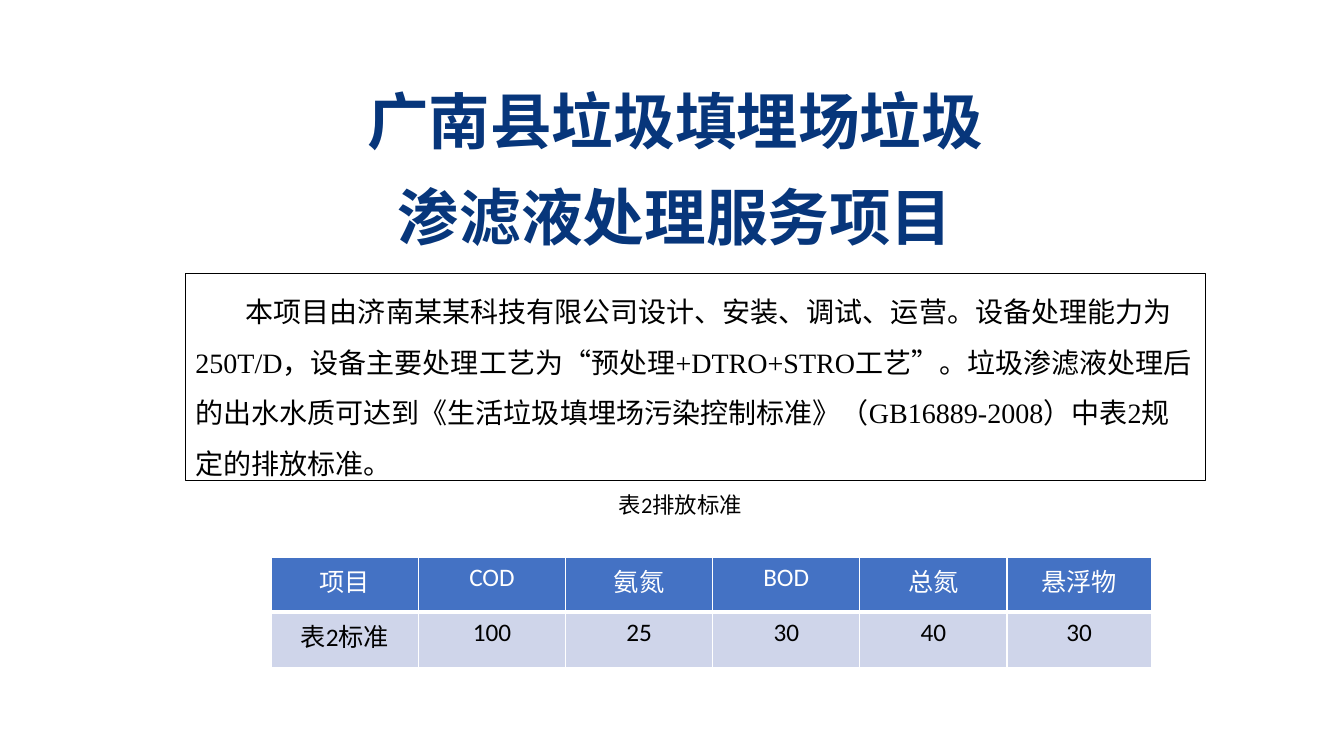
from dataclasses import dataclass

from lxml import etree
from pptx import Presentation
from pptx.dml.color import RGBColor
from pptx.enum.shapes import MSO_SHAPE
from pptx.enum.text import MSO_ANCHOR, MSO_AUTO_SIZE, PP_ALIGN
from pptx.oxml.ns import qn
from pptx.util import Inches, Pt

RECT = MSO_SHAPE.RECTANGLE
TOP = MSO_ANCHOR.TOP
GROW = MSO_AUTO_SIZE.SHAPE_TO_FIT_TEXT
LEFT, CENTER = PP_ALIGN.LEFT, PP_ALIGN.CENTER

NAVY = RGBColor(0x07, 0x36, 0x7B)
BLUE = RGBColor(0x44, 0x72, 0xC4)
PALE = RGBColor(0xCF, 0xD5, 0xEA)
BLACK = RGBColor(0, 0, 0)
WHITE = RGBColor(0xFF, 0xFF, 0xFF)

WIDTH, HEIGHT = Inches(13.33), Inches(7.5)
COL = 10.95  # table column, percent of slide width

ROWS = [
    ["项目", "COD", "氨氮", "BOD", "总氮", "悬浮物"],
    ["表2标准", "100", "25", "30", "40", "30"],
]
ABOUT = (
    "本项目由济南某某科技有限公司设计、安装、调试、运营。设备处理能力为250T/D，"
    "设备主要处理工艺为“预处理+DTRO+STRO工艺”。垃圾渗滤液处理后的出水水质可达到"
    "《生活垃圾填埋场污染控制标准》（GB16889-2008）中表2规定的排放标准。"
)


@dataclass(frozen=True)
class Box:
    """A place on the slide, in percent of its width and height."""
    left: float
    top: float
    width: float
    height: float

    def place(self) -> tuple[int, int, int, int]:
        return (across(self.left), down(self.top),
                across(self.width), down(self.height))


@dataclass(frozen=True)
class Style:
    font: str
    size: int
    color: RGBColor
    align: PP_ALIGN = LEFT
    bold: bool = False
    space: float = 1.0


TITLE = Style("Arial", 44, NAVY, CENTER, True, 1.3)
BODY = Style("Times New Roman", 20, BLACK, space=1.5)
LABEL = Style("Calibri", 16, BLACK)
HEAD = Style("Calibri", 18, WHITE, CENTER)
VALUE = Style("Calibri", 18, BLACK, CENTER)


def across(share: float) -> int:
    return int(WIDTH * share / 100)


def down(share: float) -> int:
    return int(HEIGHT * share / 100)


def write(frame, text: str, style: Style):
    para = frame.paragraphs[0]
    para.alignment = style.align
    para.line_spacing = style.space
    run = para.add_run()
    run.text = text
    font = run.font
    font.name, font.size, font.bold = style.font, Pt(style.size), style.bold
    font.color.rgb = style.color
    return para


def fit(frame) -> None:
    frame.word_wrap = True
    frame.auto_size = GROW
    frame.vertical_anchor = TOP


def edge(cell, side: str, width: float) -> None:
    """Add a white border; call before the cell gets its fill."""
    props = cell._tc.get_or_add_tcPr()
    line = etree.SubElement(props, qn(f"a:ln{side}"), w=str(Pt(width)))
    fill = etree.SubElement(line, qn("a:solidFill"))
    etree.SubElement(fill, qn("a:srgbClr"), val=str(WHITE))


def add_title(slide, box: Box) -> None:
    title = slide.shapes.title
    title.left, title.top, title.width, title.height = box.place()
    fit(title.text_frame)
    write(title.text_frame, "广南县垃圾填埋场垃圾渗滤液处理服务项目", TITLE)


def add_about(slide, box: Box) -> None:
    shape = slide.shapes.add_shape(RECT, *box.place())
    shape.shadow.inherit = False
    shape.fill.background()
    shape.line.color.rgb = BLACK
    shape.line.width = Pt(0.75)
    fit(shape.text_frame)
    para = write(shape.text_frame, ABOUT, BODY)
    para._p.get_or_add_pPr().set("indent", str(Inches(0.5)))


def add_label(slide, box: Box) -> None:
    frame = slide.shapes.add_textbox(*box.place()).text_frame
    fit(frame)
    write(frame, "表2排放标准", LABEL)


def add_limits(slide, box: Box) -> None:
    count = len(ROWS[0])
    table = slide.shapes.add_table(len(ROWS), count, *box.place()).table
    for index, column in enumerate(table.columns):
        last = index == count - 1
        column.width = across(box.width - COL * index if last else COL)
    for row, texts in enumerate(ROWS):
        style, fill = (VALUE, PALE) if row else (HEAD, BLUE)
        for col, text in enumerate(texts):
            cell = table.cell(row, col)
            for side in "LRTB":
                edge(cell, side, 3 if side == "B" and not row else 1)
            cell.fill.solid()
            cell.fill.fore_color.rgb = fill
            write(cell.text_frame, text, style)


def main() -> None:
    deck = Presentation()
    deck.slide_width, deck.slide_height = WIDTH, HEIGHT
    slide = deck.slides.add_slide(deck.slide_layouts[5])
    add_about(slide, Box(13.8, 36.13, 75.92, 27.47))
    add_limits(slide, Box(20.18, 73.73, 65.49, 14.53))
    add_label(slide, Box(45.31, 64.27, 15.23, 4.93))
    add_title(slide, Box(25.13, 7.33, 50.26, 25.73))
    deck.save("out.pptx")


if __name__ == "__main__":
    main()
